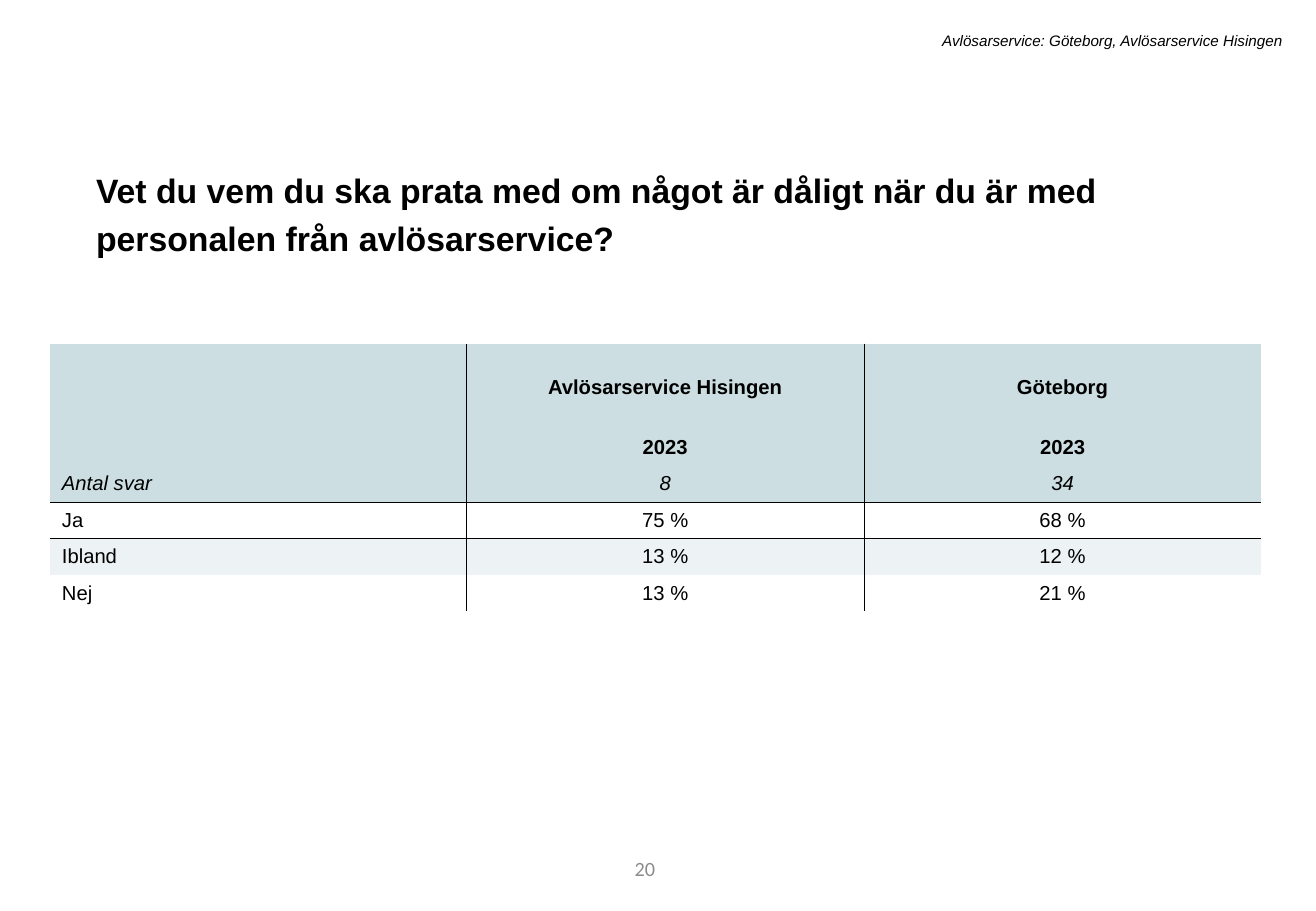
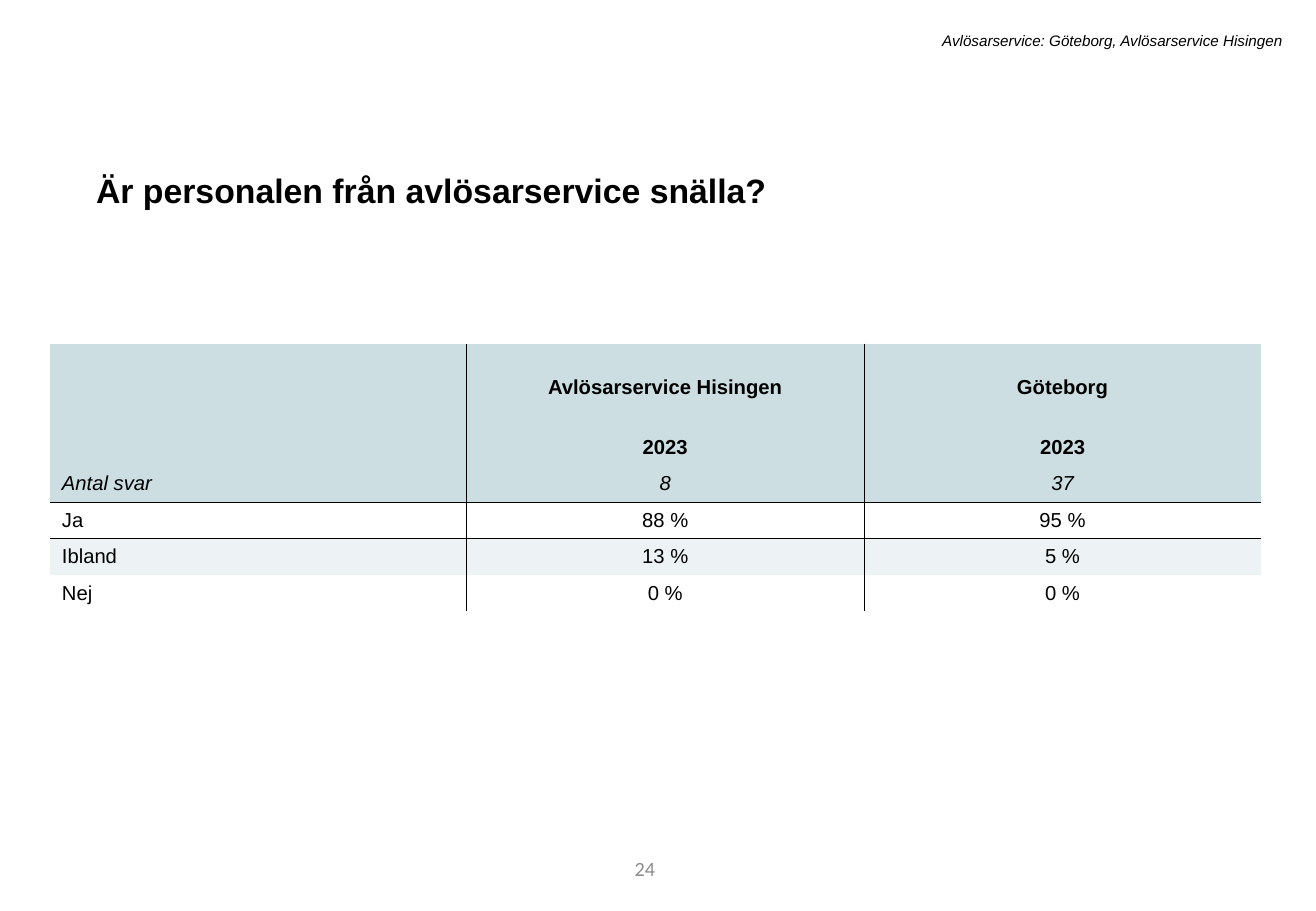
from lxml import etree
from pptx import Presentation
from pptx.dml.color import RGBColor
from pptx.enum import text
from pptx.oxml import ns
from pptx.util import Inches, Pt

COLORS = {"ink": "000000", "head": "CCDEE1", "band": "EDF3F4", "page": "8C8C8C"}
PLAIN = "{2D5ABB26-0587-4C30-8999-92F81FD0307C}"
ALIGN, ANCHOR = text.PP_ALIGN, text.MSO_ANCHOR
HEADS = 3
WIDTHS = [3.43, 3.27, 3.27]
HEIGHTS = [0.5, 0.5, 0.3, 0.3, 0.3, 0.3]
SLIDES = [
    ("20", "Vet du vem du ska prata med om något är dåligt när du är med "
           "personalen från avlösarservice?",
     [("Antal svar", "8", "34"), ("Ja", "75 %", "68 %"),
      ("Ibland", "13 %", "12 %"), ("Nej", "13 %", "21 %")]),
    ("24", "Är personalen från avlösarservice snälla?",
     [("Antal svar", "8", "37"), ("Ja", "88 %", "95 %"),
      ("Ibland", "13 %", "5 %"), ("Nej", "0 %", "0 %")]),
]


def write(frame, words, size, align=ALIGN.LEFT, color="ink", name="Arial", **style):
    para = frame.paragraphs[0]
    para.alignment = align
    run = para.add_run()
    run.text = words
    run.font.color.rgb = RGBColor.from_string(COLORS[color])
    for key, value in {"size": Pt(size), "name": name, **style}.items():
        setattr(run.font, key, value)
    return para


def rule(cell, side):
    """Draw a thin line on one side of a cell: L, R, T or B."""
    line = etree.SubElement(cell._tc.get_or_add_tcPr(), ns.qn("a:ln" + side),
                            w=str(Pt(0.25)))
    fill = etree.SubElement(line, ns.qn("a:solidFill"))
    etree.SubElement(fill, ns.qn("a:srgbClr"), val=COLORS["ink"])


deck = Presentation()
deck.slide_width, deck.slide_height = Inches(10.83), Inches(7.5)

for page, question, answers in SLIDES:
    slide = deck.slides.add_slide(deck.slide_layouts[5])

    title = slide.shapes.title
    title.left, title.top = Inches(0.69), Inches(1.28)
    title.width, title.height = Inches(9.4), Inches(0.47)
    frame = title.text_frame
    frame.word_wrap = True
    frame.vertical_anchor = ANCHOR.TOP
    frame.auto_size = text.MSO_AUTO_SIZE.SHAPE_TO_FIT_TEXT
    para = write(frame, question, 20, bold=True)
    para.line_spacing, para.space_before = 1.2, Pt(10)

    label = slide.shapes.add_textbox(Inches(1.79), Inches(0.21),
                                     Inches(8.86), Inches(0.25)).text_frame
    label.word_wrap = True
    write(label, "Avlösarservice: Göteborg, Avlösarservice Hisingen", 9,
          ALIGN.RIGHT, italic=True)

    number = slide.shapes.add_textbox(Inches(3.05), Inches(6.95),
                                      Inches(2.44), Inches(0.4)).text_frame
    number.word_wrap = True
    number.vertical_anchor = ANCHOR.MIDDLE
    write(number, page, 12, ALIGN.RIGHT, "page", "Calibri")

    rows = [("", "Avlösarservice Hisingen", "Göteborg"), ("", "2023", "2023"), *answers]
    table = slide.shapes.add_table(len(rows), len(WIDTHS), Inches(0.41), Inches(2.83),
                                   Inches(sum(WIDTHS)), Inches(sum(HEIGHTS))).table
    table._tbl.tblPr.find(ns.qn("a:tableStyleId")).text = PLAIN
    table.first_row = table.horz_banding = False
    for col, width in zip(table.columns, WIDTHS):
        col.width = Inches(width)
    for row, height in zip(table.rows, HEIGHTS):
        row.height = Inches(height)

    for r, row in enumerate(rows):
        for c, words in enumerate(row):
            cell = table.cell(r, c)
            sides = {"L": c > 0, "R": c < len(WIDTHS) - 1,
                     "T": r == HEADS, "B": r == HEADS - 1}
            for side, shown in sides.items():
                if shown:
                    rule(cell, side)
            if r < HEADS or r == HEADS + 1:
                cell.fill.solid()
                shade = COLORS["head" if r < HEADS else "band"]
                cell.fill.fore_color.rgb = RGBColor.from_string(shade)
            else:
                cell.fill.background()
            cell.vertical_anchor = ANCHOR.BOTTOM if r < HEADS - 1 else ANCHOR.MIDDLE
            if words:
                write(cell.text_frame, words, 12, ALIGN.CENTER if c else ALIGN.LEFT,
                      bold=r < HEADS - 1, italic=r == HEADS - 1)

deck.save("out.pptx")
